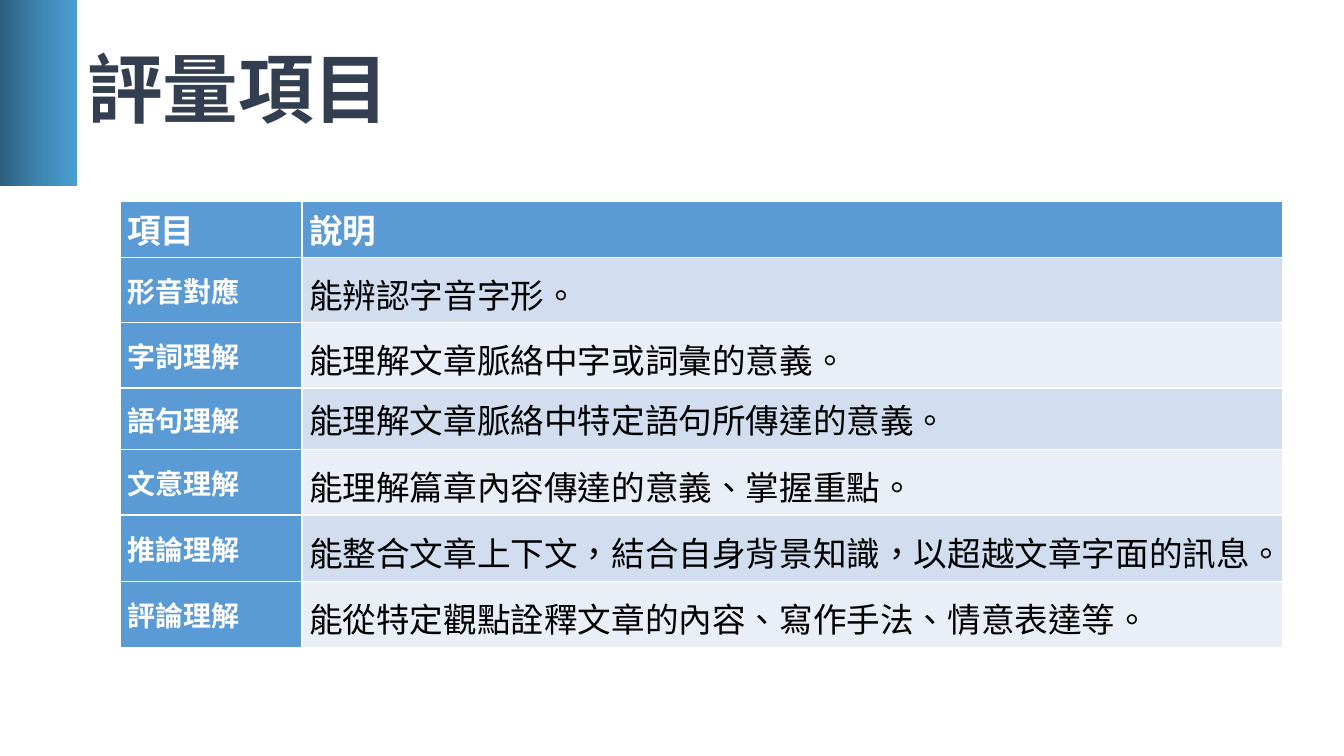
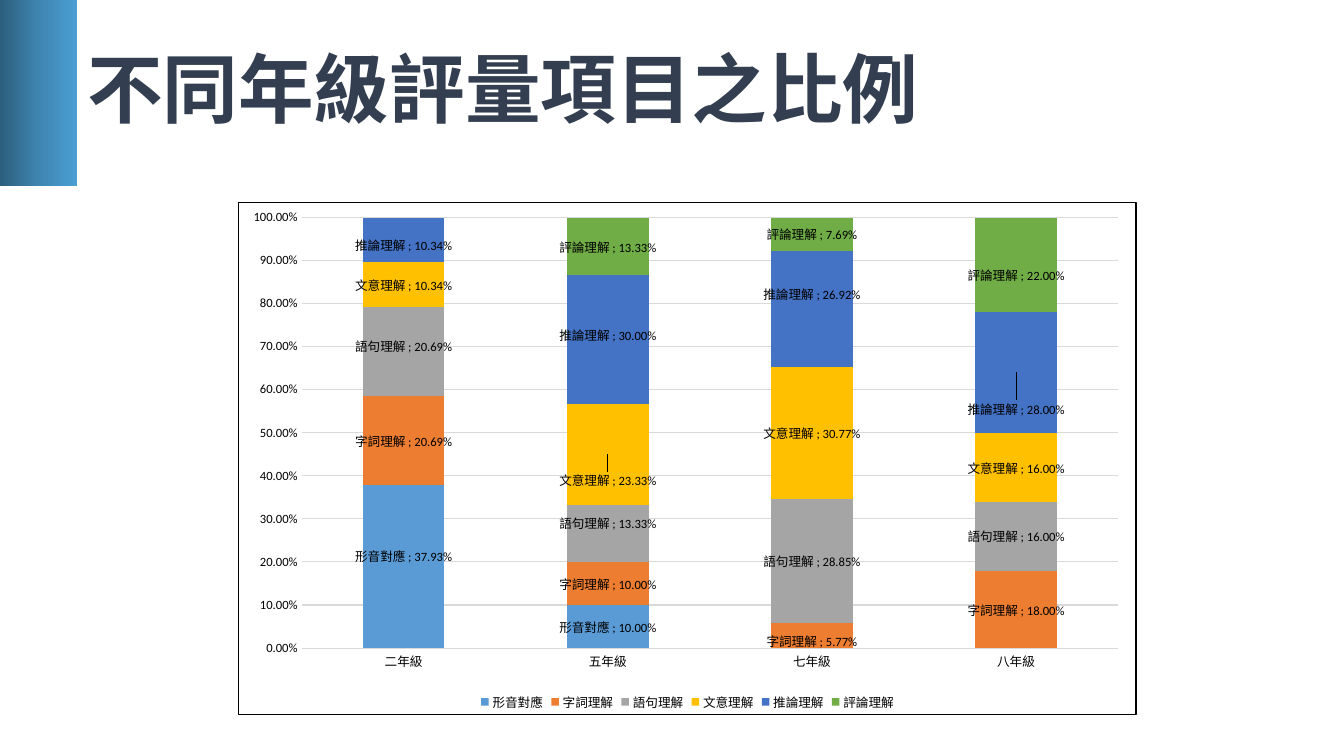
import copy

import lxml.etree
import pptx
import pptx.chart.data
import pptx.dml.color
import pptx.enum.chart
import pptx.enum.lang
import pptx.enum.shapes
import pptx.enum.text
import pptx.oxml
import pptx.oxml.ns
import pptx.util

Cm, Pt = pptx.util.Cm, pptx.util.Pt
RGBColor = pptx.dml.color.RGBColor
qn = pptx.oxml.ns.qn

# Shared style
WHITE = RGBColor(0xFF, 0xFF, 0xFF)
BLACK = RGBColor(0x00, 0x00, 0x00)
NAVY = RGBColor(0x33, 0x3F, 0x50)
BLUE = RGBColor(0x5B, 0x9B, 0xD5)
ORANGE = RGBColor(0xED, 0x7D, 0x31)
GRAY = RGBColor(0xA5, 0xA5, 0xA5)
YELLOW = RGBColor(0xFF, 0xC0, 0x00)
INDIGO = RGBColor(0x44, 0x72, 0xC4)
GREEN = RGBColor(0x70, 0xAD, 0x47)
ROW_DARK = RGBColor(0xD2, 0xDE, 0xEF)
ROW_LIGHT = RGBColor(0xEA, 0xEF, 0xF7)
GRID = RGBColor(0xD9, 0xD9, 0xD9)
BAND_STOPS = [(0, RGBColor(0x2C, 0x5E, 0x7C)), (0.5, RGBColor(0x3F, 0x85, 0xB1)),
              (1, RGBColor(0x4A, 0x9E, 0xD2))]
CJK_FONT = "Noto Sans CJK SC"
CHART_FONT = "Calibri"
BAND_WIDTH, BAND_HEIGHT = Cm(1.94), Cm(4.7)

# Table: item, description, row height in cm, line spacing
ITEMS = [
    ("形音對應", "能辨認字音字形。", 1.65, 1.15),
    ("字詞理解", "能理解文章脈絡中字或詞彙的意義。", 1.65, 1.15),
    ("語句理解", "能理解文章脈絡中特定語句所傳達的意義。", 1.55, 1),
    ("文意理解", "能理解篇章內容傳達的意義、掌握重點。", 1.65, 1.15),
    ("推論理解", "能整合文章上下文，結合自身背景知識，以超越文章字面的訊息。", 1.68, 1.15),
    ("評論理解", "能從特定觀點詮釋文章的內容、寫作手法、情意表達等。", 1.65, 1.15),
]

# Chart: values by grade, colour, vertical label shifts (share of chart height)
GRADES = ["二年級", "五年級", "七年級", "八年級"]
SERIES = [
    ((0.3793, 0.1, None, None), BLUE, {0: -0.02}),
    ((0.2069, 0.1, 0.0577, 0.18), ORANGE, {2: 0.01}),
    ((0.2069, 0.1333, 0.2885, 0.16), GRAY, {0: -0.01, 1: -0.02}),
    ((0.1034, 0.2333, 0.3077, 0.16), YELLOW, {1: 0.05}),
    ((0.1034, 0.3, 0.2692, 0.28), INDIGO, {0: 0.01, 1: -0.01, 2: -0.03, 3: 0.07}),
    ((None, 0.1333, 0.0769, 0.22), GREEN, {3: 0.02}),
]


def style_text(p, size, color, bold, spacing=None, before=None):
    f = p.font
    f.name, f.size, f.bold = CJK_FONT, Pt(size), bold
    f.color.rgb = color
    p.line_spacing = spacing
    p.space_before = before
    for r in p.runs:
        r.font.language_id = pptx.enum.lang.MSO_LANGUAGE_ID.TRADITIONAL_CHINESE


def set_east_asian_font(element):
    for latin in element.iter(qn("a:latin")):
        ea = lxml.etree.Element(qn("a:ea"), typeface=CJK_FONT)
        latin.addnext(ea)


def add_band(sl, layout):
    """Gradient corner band, kept on the layout."""
    sp = sl.shapes.add_shape(pptx.enum.shapes.MSO_SHAPE.RECTANGLE,
                             0, 0, BAND_WIDTH, BAND_HEIGHT)
    sp.shadow.inherit = False
    sp.line.fill.background()
    sp.fill.gradient()
    sp.fill.gradient_angle = 0
    stops = next(sp.element.iter(qn("a:gsLst")))
    stops.insert(1, copy.deepcopy(stops[0]))
    for stop, (position, color) in zip(sp.fill.gradient_stops, BAND_STOPS):
        stop.position = position
        stop.color.rgb = color
    layout.shapes.element.insert(2, sp.element)


def add_title(sl, text):
    title = sl.shapes.title
    title.left, title.top = BAND_WIDTH, 0
    title.width, title.height = Cm(29.21), BAND_HEIGHT
    tf = title.text_frame
    tf.text = text
    tf.word_wrap = True
    tf.auto_size = pptx.enum.text.MSO_AUTO_SIZE.NONE
    tf.vertical_anchor = pptx.enum.text.MSO_ANCHOR.MIDDLE
    p = tf.paragraphs[0]
    p.alignment = pptx.enum.text.PP_ALIGN.LEFT
    style_text(p, 54, NAVY, True, 0.9)
    set_east_asian_font(title.element)


def fill_cell(cell, text, fill, *style):
    cell.fill.solid()
    cell.fill.fore_color.rgb = fill
    cell.vertical_anchor = pptx.enum.text.MSO_ANCHOR.MIDDLE
    cell.margin_left = cell.margin_right = Cm(0.18)
    cell.margin_top = cell.margin_bottom = 0
    cell.text = text
    style_text(cell.text_frame.paragraphs[0], *style)


def add_item_table(sl, left, top, width, height):
    frame = sl.shapes.add_table(len(ITEMS) + 1, 2, left, top, width, height)
    table = frame.table
    table.first_col = True
    table.columns[0].width = Cm(4.58)
    table.columns[1].width = width - Cm(4.58)
    table.rows[0].height = Cm(1.4)
    for col, heading in enumerate(("項目", "說明")):
        fill_cell(table.cell(0, col), heading, BLUE, 24, WHITE, True)
    for row, (item, description, row_height, spacing) in enumerate(ITEMS, 1):
        table.rows[row].height = Cm(row_height)
        fill_cell(table.cell(row, 0), item, BLUE, 20, WHITE, True, None, Pt(6))
        fill_cell(table.cell(row, 1), description, ROW_DARK if row % 2 else ROW_LIGHT,
                  24, BLACK, False, spacing)
    set_east_asian_font(frame.element)


def style_chart_font(font, size):
    font.name, font.size, font.bold = CHART_FONT, Pt(size), False
    font.color.rgb = BLACK


def manual_layout(**values):
    layout = lxml.etree.Element(qn("c:layout"))
    manual = lxml.etree.SubElement(layout, qn("c:manualLayout"))
    for name, value in values.items():
        lxml.etree.SubElement(manual, qn("c:" + name), val=str(value))
    return layout


def shift_labels(labels, shifts):
    """Move single labels up or down, keeping the format of their series."""
    labels.find(qn("c:showBubbleSize")).addnext(lxml.etree.Element(qn("c:separator")))
    labels.find(qn("c:separator")).text = " ; "
    shared = [child for child in labels if child.tag != qn("c:showLeaderLines")]
    for place, (point, shift) in enumerate(shifts.items()):
        label = lxml.etree.Element(qn("c:dLbl"))
        lxml.etree.SubElement(label, qn("c:idx"), val=str(point))
        label.append(manual_layout(x=0, y=shift))
        label.extend(copy.deepcopy(child) for child in shared)
        labels.insert(place, label)


def frame_chart(chart):
    """White background, black border and a fixed plot area."""
    sp_pr = pptx.oxml.parse_xml(
        f'<c:spPr {pptx.oxml.ns.nsdecls("c", "a")}>'
        f'<a:solidFill><a:srgbClr val="{WHITE}"/></a:solidFill>'
        f'<a:ln w="12700"><a:solidFill><a:srgbClr val="{BLACK}"/></a:solidFill></a:ln>'
        '</c:spPr>')
    chart.element.find(qn("c:chart")).addnext(sp_pr)
    plot_area = next(chart.element.iter(qn("c:plotArea")))
    for old in plot_area.findall(qn("c:layout")):
        plot_area.remove(old)
    plot_area.insert(0, manual_layout(layoutTarget="inner", xMode="edge", yMode="edge",
                                      x=0.07, y=0.03, w=0.91, h=0.84))


def style_axes(chart):
    enum = pptx.enum.chart
    for axis in (chart.category_axis, chart.value_axis):
        axis.major_tick_mark = axis.minor_tick_mark = enum.XL_TICK_MARK.NONE
        style_chart_font(axis.tick_labels.font, 9)
    value_axis = chart.value_axis
    value_axis.minimum_scale, value_axis.maximum_scale = 0, 1
    value_axis.major_unit = 0.1
    value_axis.tick_labels.number_format = "0.00%"
    value_axis.tick_labels.number_format_is_linked = False
    value_axis.format.line.fill.background()
    for line in (chart.category_axis.format.line, value_axis.major_gridlines.format.line):
        line.color.rgb = GRID
        line.width = Pt(0.75)


def add_ratio_chart(sl, left, top, width, height):
    enum = pptx.enum.chart
    data = pptx.chart.data.CategoryChartData(number_format="0.00%")
    data.categories = GRADES
    for (item, *_), (values, *_) in zip(ITEMS, SERIES):
        data.add_series(item, values)
    chart = sl.shapes.add_chart(enum.XL_CHART_TYPE.COLUMN_STACKED,
                                left, top, width, height, data).chart
    style_chart_font(chart.font, 10)
    chart.has_title = False
    chart.has_legend = True
    chart.legend.position = enum.XL_LEGEND_POSITION.BOTTOM
    chart.legend.include_in_layout = False
    style_chart_font(chart.legend.font, 9)
    style_axes(chart)
    frame_chart(chart)

    plot = chart.plots[0]
    plot.gap_width, plot.overlap = 150, 100
    plot.vary_by_categories = False
    for series, (_, color, _) in zip(plot.series, SERIES):
        series.format.fill.solid()
        series.format.fill.fore_color.rgb = color
        labels = series.data_labels
        labels.show_value = labels.show_series_name = True
        labels.number_format = "0.00%"
        labels.number_format_is_linked = False
        style_chart_font(labels.font, 9)
    label_groups = list(chart.element.iter(qn("c:dLbls")))
    for group, (_, _, shifts) in zip(label_groups, SERIES):
        shift_labels(group, shifts)


def main():
    prs = pptx.Presentation()
    prs.slide_width, prs.slide_height = Cm(33.87), Cm(19.05)
    layout = prs.slide_layouts[5]

    sl = prs.slides.add_slide(layout)
    add_band(sl, layout)
    add_title(sl, "評量項目")
    add_item_table(sl, Cm(3.03), Cm(5.08), Cm(29.3), Cm(11.23))

    sl = prs.slides.add_slide(layout)
    add_title(sl, "不同年級評量項目之比例")
    add_ratio_chart(sl, Cm(6), Cm(5.08), Cm(22.65), Cm(12.95))

    prs.save("out.pptx")


if __name__ == "__main__":
    main()
